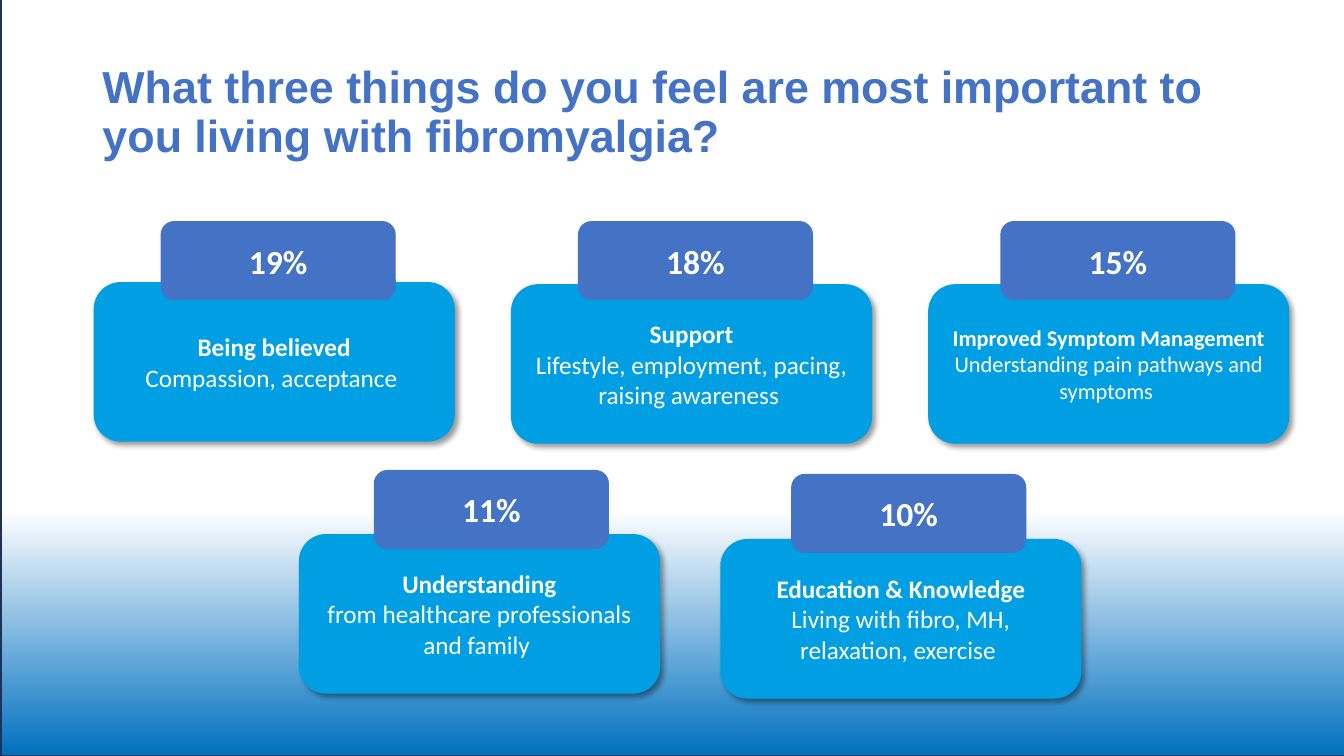
from dataclasses import dataclass
from lxml import etree
from pptx import Presentation
from pptx.dml.color import RGBColor
from pptx.enum.shapes import MSO_SHAPE
from pptx.enum.text import MSO_ANCHOR, PP_ALIGN
from pptx.oxml.ns import qn
from pptx.util import Pt

RECT, ROUND = MSO_SHAPE.RECTANGLE, MSO_SHAPE.ROUNDED_RECTANGLE
MIDDLE = MSO_ANCHOR.MIDDLE
LEFT, CENTER = PP_ALIGN.LEFT, PP_ALIGN.CENTER


@dataclass(frozen=True)
class Theme:
    blue: str = "4472C4"
    cyan: str = "009FE3"
    deep: str = "0070C0"
    navy: str = "1E3256"
    white: str = "FFFFFF"
    black: str = "000000"
    heading: str = "Arial"
    body: str = "Calibri"
    title_size: int = 32
    badge_size: int = 24
    card_size: int = 18
    small_size: int = 16


T = Theme()


def add_run(p, text, color, **font):
    r = p.add_run()
    r.text = text
    r.font.color.rgb = RGBColor.from_string(color)
    for name, value in font.items():
        setattr(r.font, name, value)


def add_box(shapes, kind, box, color, line):
    sp = shapes.add_shape(kind, *[Pt(v) for v in box])
    sp.shadow.inherit = False
    sp.fill.solid()
    sp.fill.fore_color.rgb = RGBColor.from_string(color)
    sp.line.color.rgb = RGBColor.from_string(line)
    sp.line.width = Pt(1)
    tf = sp.text_frame
    tf.word_wrap = True
    tf.vertical_anchor = MIDDLE
    return sp


prs = Presentation()
prs.slide_width, prs.slide_height = Pt(960), Pt(540)
s = prs.slides.add_slide(prs.slide_layouts[5])

# Background fading to blue at the bottom
sp = add_box(s.shapes, RECT, (0.7, -26, 986, 566), T.white, T.navy)
sp.rotation = 180
sp.fill.gradient()
sp.fill.gradient_angle = 270
for stop, position, color in zip(sp.fill.gradient_stops, (0, 0.31), (T.deep, T.white)):
    stop.position = position
    stop.color.rgb = RGBColor.from_string(color)

# Title, brought in front of the background
title = s.shapes.title
s.shapes._spTree.append(title._element)
title.left, title.top, title.width, title.height = Pt(66), Pt(29), Pt(855), Pt(104.4)
tf = title.text_frame
tf.word_wrap = True
tf.vertical_anchor = MIDDLE
p = tf.paragraphs[0]
p.alignment = LEFT
p.line_spacing = 0.9
add_run(p, "What three things do you feel are most important to you living with fibromyalgia?",
        T.blue, name=T.heading, size=Pt(T.title_size), bold=True)

# Answers: card left and top, badge left and top, share, heading, detail, size
ANSWERS = [
    (67.4, 202, 115.2, 158.4, "19%", "Being believed",
     "Compassion, acceptance ", T.card_size),
    (365.5, 203.5, 413.3, 158.4, "18%", "Support",
     "Lifestyle, employment, pacing, raising awareness ", T.card_size),
    (663.5, 203.5, 715, 158.4, "15%", "Improved Symptom Management",
     "Understanding pain pathways and symptoms ", T.small_size),
    (214, 382, 267.5, 336.2, "11%", "Understanding",
     "from healthcare professionals and family ", T.card_size),
    (515, 385.5, 565.6, 339, "10%", "Education & Knowledge",
     "Living with fibro, MH, relaxation, exercise ", T.card_size),
]

# Cards with a soft shadow
for x, y, _, _, _, heading, detail, size in ANSWERS:
    sp = add_box(s.shapes, ROUND, (x, y, 257, 113), T.cyan, T.cyan)
    effects = sp._element.spPr.find(qn("a:effectLst"))
    shadow = etree.SubElement(effects, qn("a:outerShdw"), blurRad=str(Pt(4)),
                              dist=str(Pt(3)), dir="2700000", algn="tl", rotWithShape="0")
    tint = etree.SubElement(shadow, qn("a:srgbClr"), val=T.black)
    etree.SubElement(tint, qn("a:alpha"), val="40000")
    tf = sp.text_frame
    for p, text, bold in ((tf.paragraphs[0], heading, True), (tf.add_paragraph(), detail, False)):
        p.alignment = CENTER
        add_run(p, text, T.white, name=T.body, size=Pt(size), bold=bold)

# Percentage badges on top of the cards
for _, _, x, y, share, *_ in ANSWERS:
    sp = add_box(s.shapes, ROUND, (x, y, 167, 55.5), T.blue, T.blue)
    p = sp.text_frame.paragraphs[0]
    p.alignment = CENTER
    add_run(p, share, T.white, name=T.body, size=Pt(T.badge_size), bold=True)

prs.save("out.pptx")
